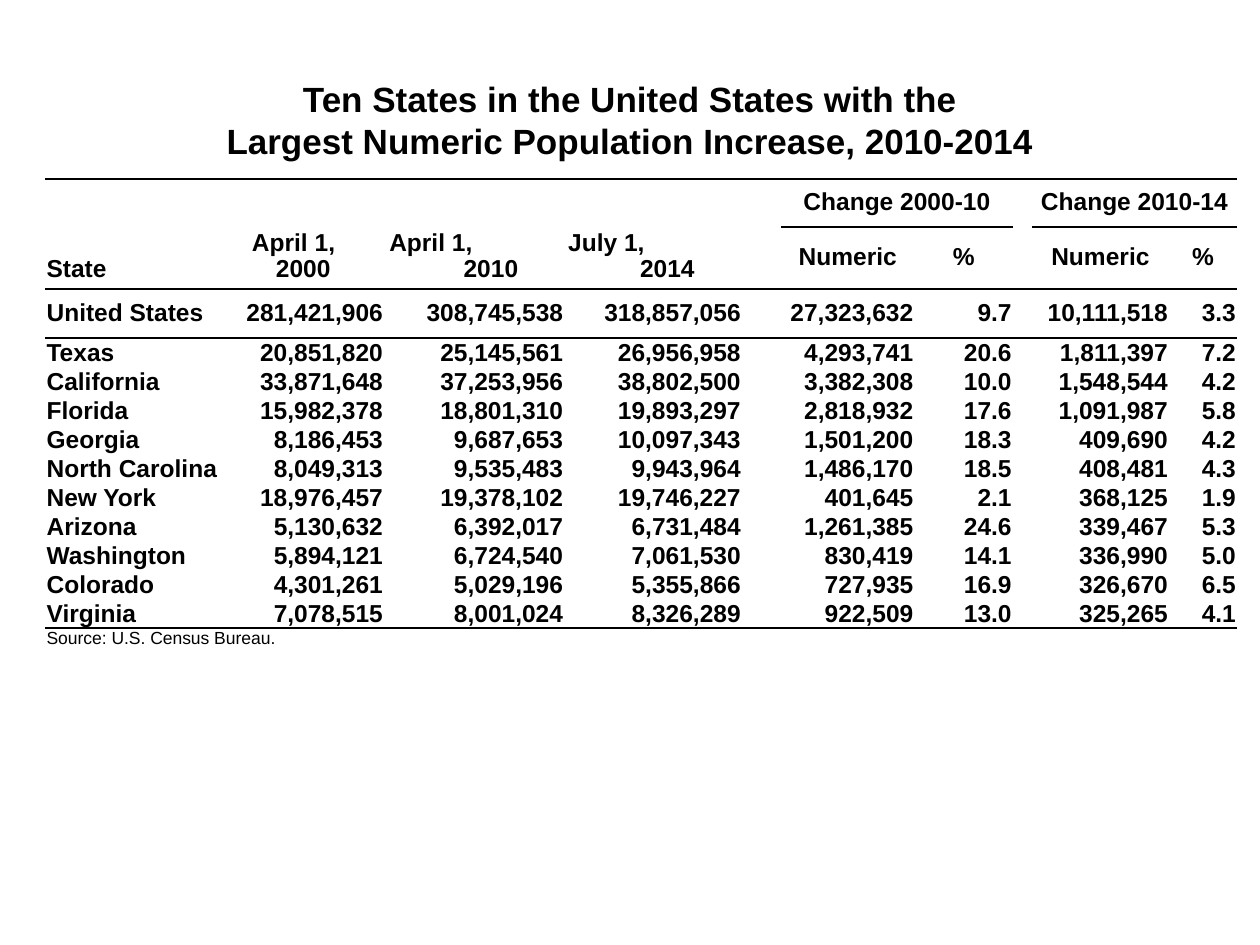
from dataclasses import dataclass

from lxml.etree import SubElement
from pptx import Presentation
from pptx.dml.color import RGBColor
from pptx.enum.text import MSO_ANCHOR as Anchor, PP_ALIGN as Align
from pptx.oxml.ns import qn
from pptx.util import Inches, Pt


@dataclass(frozen=True)
class Theme:
    font: str = "Arial"
    ink: str = "000000"
    paper: str = "FFFFFF"
    title: int = 20
    body: int = 14
    source: int = 10
    rule: float = 1.5
    table_spacing: float = 0.95


THEME = Theme()
NO_GRID_STYLE = "{2D5ABB26-0587-4C30-8999-92F81FD0307C}"

TITLE = ("Ten States in the United States with the",
         "Largest Numeric Population Increase, 2010-2014")
SOURCE = "Source: U.S. Census Bureau."
COLUMN_WIDTHS = (1.4, 1.29, 1.43, 1.41, 0.31, 1.06, 0.78, 0.15, 1.09, 0.54)
DATA_COLUMNS = (0, 1, 2, 3, 5, 6, 8, 9)
CHANGE_GROUPS = {5: "Change 2000-10", 8: "Change 2010-14"}
# Column: (day, its indent, year, its indent)
DATE_HEADINGS = {
    1: ("April 1,", 0.23, "2000", 0.42),
    2: ("April 1,", 0.03, "2010", 0.62),
    3: ("July 1,", 0.02, "2014", 0.59),
}
POPULATION = (
    ("United States", "281,421,906", "308,745,538", "318,857,056", "27,323,632", "9.7", "10,111,518", "3.3"),
    ("Texas", "20,851,820", "25,145,561", "26,956,958", "4,293,741", "20.6", "1,811,397", "7.2"),
    ("California", "33,871,648", "37,253,956", "38,802,500", "3,382,308", "10.0", "1,548,544", "4.2"),
    ("Florida", "15,982,378", "18,801,310", "19,893,297", "2,818,932", "17.6", "1,091,987", "5.8"),
    ("Georgia", "8,186,453", "9,687,653", "10,097,343", "1,501,200", "18.3", "409,690", "4.2"),
    ("North Carolina", "8,049,313", "9,535,483", "9,943,964", "1,486,170", "18.5", "408,481", "4.3"),
    ("New York", "18,976,457", "19,378,102", "19,746,227", "401,645", "2.1", "368,125", "1.9"),
    ("Arizona", "5,130,632", "6,392,017", "6,731,484", "1,261,385", "24.6", "339,467", "5.3"),
    ("Washington", "5,894,121", "6,724,540", "7,061,530", "830,419", "14.1", "336,990", "5.0"),
    ("Colorado", "4,301,261", "5,029,196", "5,355,866", "727,935", "16.9", "326,670", "6.5"),
    ("Virginia", "7,078,515", "8,001,024", "8,326,289", "922,509", "13.0", "325,265", "4.1"),
)
FIRST_DATA_ROW = 2
SOURCE_ROW = FIRST_DATA_ROW + len(POPULATION)
ROW_HEIGHTS = (0.38, 0.49, 0.39) + (0.23,) * (len(POPULATION) - 1) + (0.18,)


def style(paragraph, size, align=Align.LEFT, bold=True):
    paragraph.alignment = align
    font = paragraph.font
    font.name, font.size, font.bold = THEME.font, Pt(size), bold
    font.color.rgb = RGBColor.from_string(THEME.ink)


def add_title(slide):
    frame = slide.shapes.add_textbox(Inches(0.5), Inches(0.33), Inches(9), Inches(1)).text_frame
    frame.word_wrap = True
    frame.vertical_anchor = Anchor.BOTTOM
    heading = frame.paragraphs[0]
    heading.add_run().text = TITLE[0]
    heading.add_line_break()
    heading.add_run().text = TITLE[1]
    style(heading, THEME.title, Align.CENTER)


def write(cell, text, align=Align.LEFT, anchor=Anchor.MIDDLE, size=THEME.body, bold=True):
    cell.text = text
    cell.vertical_anchor = anchor
    for paragraph in cell.text_frame.paragraphs:
        paragraph.line_spacing = THEME.table_spacing
        style(paragraph, size, align, bold)


def set_border(cell, side, ruled):
    line = SubElement(cell._tc.get_or_add_tcPr(), qn(f"a:{side}"), w=str(Pt(THEME.rule)))
    if ruled:
        SubElement(SubElement(line, qn("a:solidFill")), qn("a:srgbClr"), val=THEME.ink)
    else:
        SubElement(line, qn("a:noFill"))


def add_rules(table):
    """Set the border above and below every cell, inked where a rule runs."""
    all_columns = range(len(COLUMN_WIDTHS))
    change_columns = [column for first in CHANGE_GROUPS for column in (first, first + 1)]
    rules = {0: all_columns, 1: change_columns, 2: all_columns, 3: all_columns, SOURCE_ROW: all_columns}
    for row in range(len(ROW_HEIGHTS)):
        for column in all_columns:
            cell = table.cell(row, column)
            set_border(cell, "lnT", column in rules.get(row, ()))
            set_border(cell, "lnB", column in rules.get(row + 1, ()))


def add_headings(table):
    for column in range(4):
        table.cell(0, column).merge(table.cell(1, column))
        table.cell(0, column).margin_bottom = Inches(0.05)
    write(table.cell(0, 0), "State", anchor=Anchor.BOTTOM)
    for column, (day, day_indent, year, year_indent) in DATE_HEADINGS.items():
        heading = table.cell(0, column)
        write(heading, f"{day}\n{year}", anchor=Anchor.BOTTOM)
        for paragraph, indent in zip(heading.text_frame.paragraphs, (day_indent, year_indent)):
            paragraph._p.get_or_add_pPr().set("marL", str(Inches(indent)))
    for column, label in CHANGE_GROUPS.items():
        table.cell(0, column).merge(table.cell(0, column + 1))
        write(table.cell(0, column), label, Align.CENTER)
        write(table.cell(1, column), "Numeric", Align.CENTER)
        write(table.cell(1, column + 1), "%", Align.CENTER)


def add_figures(table):
    for row, values in enumerate(POPULATION, FIRST_DATA_ROW):
        anchor = Anchor.MIDDLE if row == FIRST_DATA_ROW else Anchor.BOTTOM
        for column, value in zip(DATA_COLUMNS, values):
            write(table.cell(row, column), value, Align.RIGHT if column else Align.LEFT, anchor)


def shrink_empty_cells(table):
    """Keep cells without text from stretching their rows."""
    for cell in table.iter_cells():
        if not cell.text:
            mark = SubElement(cell.text_frame.paragraphs[0]._p, qn("a:endParaRPr"), sz=str(THEME.source * 100))
            SubElement(mark, qn("a:latin"), typeface=THEME.font)


def add_population_table(slide):
    table = slide.shapes.add_table(
        len(ROW_HEIGHTS), len(COLUMN_WIDTHS), Inches(0.36), Inches(1.42),
        Inches(sum(COLUMN_WIDTHS)), Inches(sum(ROW_HEIGHTS))).table
    table.first_row = table.horz_banding = False
    table._tbl.tblPr.find(qn("a:tableStyleId")).text = NO_GRID_STYLE
    for column, width in zip(table.columns, COLUMN_WIDTHS):
        column.width = Inches(width)
    for row, height in zip(table.rows, ROW_HEIGHTS):
        row.height = Inches(height)
    add_rules(table)
    for cell in table.iter_cells():
        cell.margin_left = cell.margin_right = Inches(0.01)
        cell.margin_top = cell.margin_bottom = 0
        cell.fill.solid()
        cell.fill.fore_color.rgb = RGBColor.from_string(THEME.paper)
    add_headings(table)
    add_figures(table)
    table.cell(SOURCE_ROW, 0).merge(table.cell(SOURCE_ROW, len(COLUMN_WIDTHS) - 1))
    write(table.cell(SOURCE_ROW, 0), SOURCE, size=THEME.source, bold=False)
    shrink_empty_cells(table)


def main():
    deck = Presentation()
    deck.slide_width, deck.slide_height = Inches(10), Inches(7.5)
    slide = deck.slides.add_slide(deck.slide_layouts[6])
    add_title(slide)
    add_population_table(slide)
    deck.save("out.pptx")


if __name__ == "__main__":
    main()
